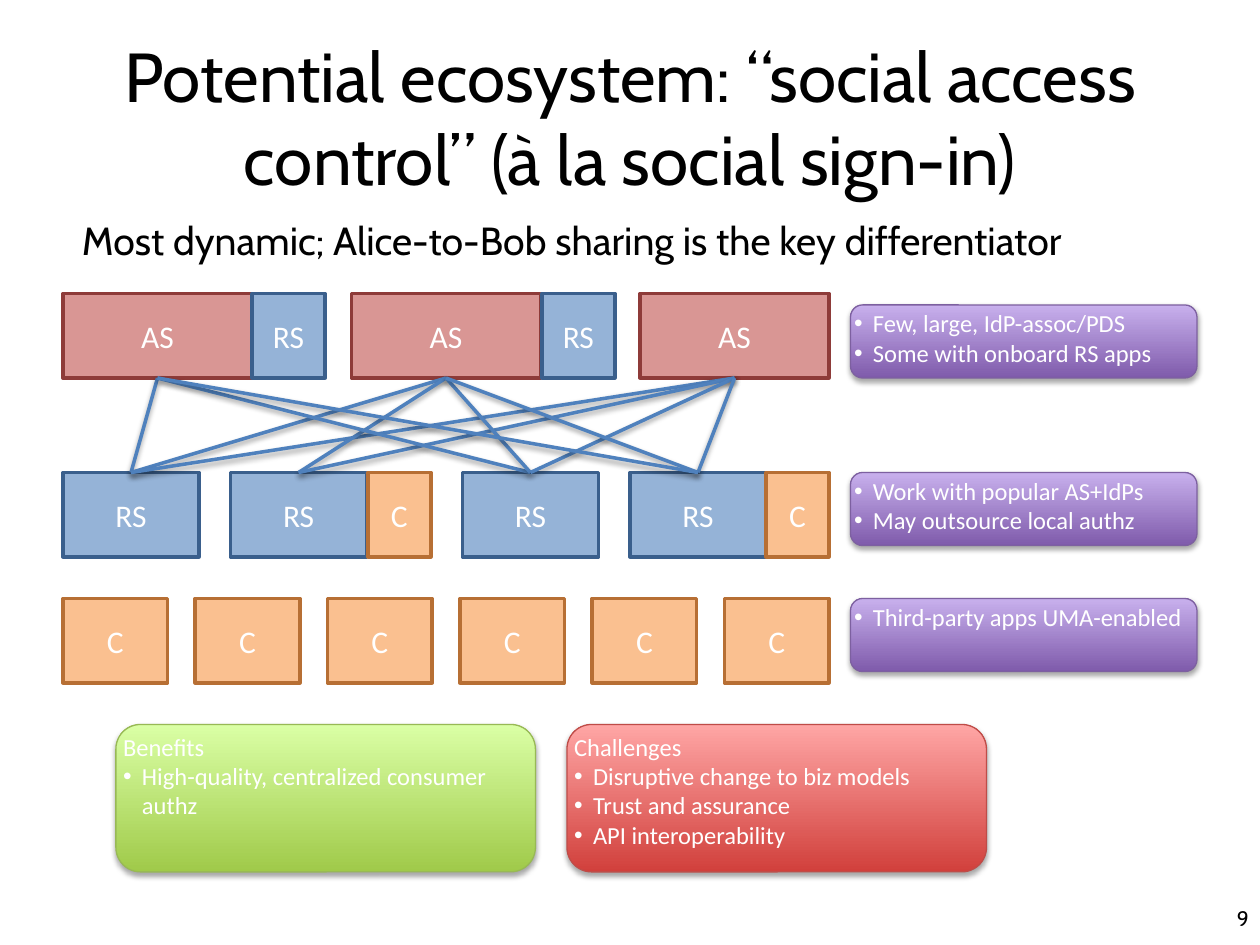
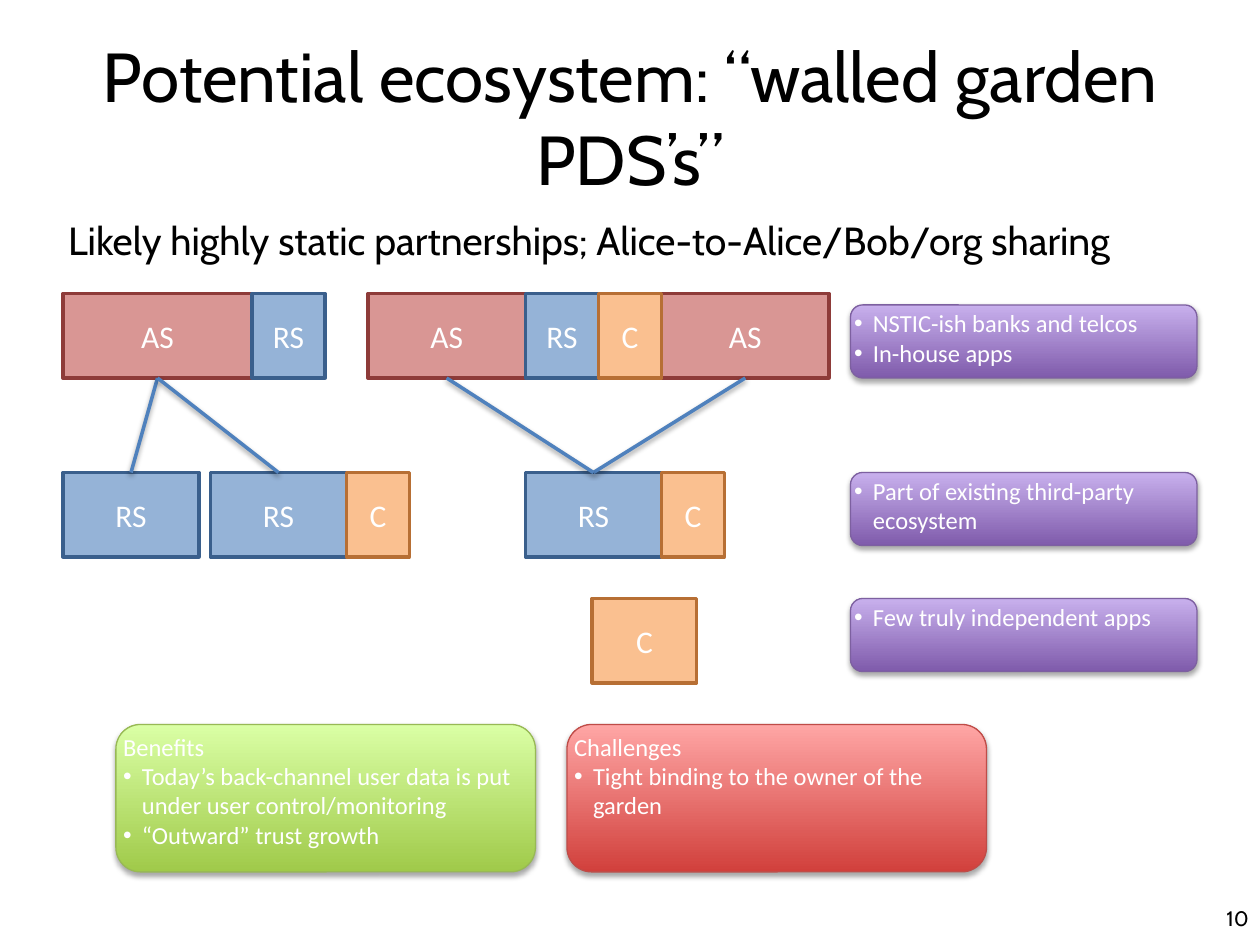
"""Build two slides on potential access-control ecosystems."""
from lxml.etree import SubElement
from pptx import Presentation
from pptx.dml.color import RGBColor
from pptx.enum.shapes import MSO_CONNECTOR as Conn, MSO_SHAPE as Form
from pptx.enum.text import MSO_ANCHOR as Anchor, MSO_AUTO_SIZE as Fit, PP_ALIGN as Align
from pptx.oxml.ns import qn
from pptx.util import Inches, Pt

hue = RGBColor.from_string

BLACK, WHITE, LINK = "000000", "FFFFFF", "4F81BD"
TINTS = {"AS": ("D99694", "8E3B39"), "RS": ("95B3D7", "3A5F8C"), "C": ("FAC090", "B76F34")}
PURPLE = ("7F5BAB", "C8B0ED", "7D60A0")
GREEN = ("A0CA4A", "DAFFA5", "98B955")
RED = ("D1403C", "FFA6A5", "BF4C48")
TOP, MID, LOW = 2.33, 3.75, 4.75
TALL = 0.67

SLIDES = [
    {
        "page": "9",
        "title": "Potential ecosystem: “social access control” (à la social sign-in)",
        "lead": (0.55, "Most dynamic; Alice-to-Bob sharing is the key differentiator"),
        "blocks": [
            ("AS", TOP, [(0.5 + 2.29 * i, 1.5) for i in range(3)]),
            ("RS", MID, [(left, 1.08) for left in (0.5, 1.83, 3.67, 5)]),
            ("RS", TOP, [(2, 0.58), (4.3, 0.58)]),
            ("C", MID, [(2.92, 0.5), (6.08, 0.5)]),
            ("C", LOW, [(0.5 + 1.05 * i, 0.83) for i in range(6)]),
        ],
        "links": [(0, 0), (0, 1), (0, 2), (1, 1), (1, 2), (2, 0),
                  (2, 1), (2, 2), (3, 2), (3, 1), (3, 0)],
        "notes": [
            ["Few, large, IdP-assoc/PDS", "Some with onboard RS apps"],
            ["Work with popular AS+IdPs", "May outsource local authz"],
            ["Third-party apps UMA-enabled"],
        ],
        "pros": ["High-quality, centralized consumer authz"],
        "cons": ["Disruptive change to biz models", "Trust and assurance",
                 "API interoperability"],
    },
    {
        "page": "10",
        "title": "Potential ecosystem: “walled garden PDS’s”",
        "lead": (0.44, "Likely highly static partnerships; Alice-to-Alice/Bob/org sharing"),
        "blocks": [
            ("AS", TOP, [(0.5, 1.5), (2.92, 1.25), (5.25, 1.33)]),
            ("RS", MID, [(left, 1.08) for left in (0.5, 1.67, 4.17)]),
            ("RS", TOP, [(2, 0.58), (4.17, 0.58)]),
            ("C", MID, [(2.75, 0.5), (5.25, 0.5)]),
            ("C", TOP, [(4.75, 0.5)]),
            ("C", LOW, [(4.7, 0.83)]),
        ],
        "links": [(0, 0), (1, 0), (2, 2), (2, 1)],
        "notes": [
            ["NSTIC-ish banks and telcos", "In-house apps"],
            ["Part of existing third-party ecosystem"],
            ["Few truly independent apps"],
        ],
        "pros": ["Today’s back-channel user data is put under user control/monitoring",
                 "“Outward” trust growth"],
        "cons": ["Tight binding to the owner of the garden"],
    },
]


def write(para, text, size, face, tint, align=Align.LEFT):
    """Add one formatted run to a paragraph."""
    para.alignment = align
    run = para.add_run()
    run.text = text
    run.font.size = Pt(size)
    run.font.name = face
    run.font.color.rgb = hue(tint)


def shade(shape, alpha, dist):
    """Drop a soft black shadow straight below a shape."""
    glow = SubElement(shape._element.spPr, qn("a:effectLst"))
    drop = SubElement(glow, qn("a:outerShdw"), blurRad=str(Pt(3.1)), dist=str(Pt(dist)),
                      dir="5400000", rotWithShape="0")
    tone = SubElement(drop, qn("a:srgbClr"), val=BLACK)
    SubElement(tone, qn("a:alpha"), val=str(alpha * 1000))


deck = Presentation()
deck.slide_width, deck.slide_height = Inches(10), Inches(7.5)

for data in SLIDES:
    slide = deck.slides.add_slide(deck.slide_layouts[1])
    shapes = slide.shapes
    title, lead = shapes.title, slide.placeholders[1]
    page = shapes.add_textbox(0, 0, 0, 0)
    left, words = data["lead"]
    for box, text, size, align, anchor, area in (
        (title, data["title"], 39.6, Align.CENTER, Anchor.MIDDLE, (0.5, 0.3, 9, 1.25)),
        (lead, words, 22.4, Align.LEFT, Anchor.TOP, (left, 1.67, 8.5, 0.42)),
        (page, data["page"], 12, Align.RIGHT, Anchor.TOP, (9.62, 7.14, 0.39, 0.4)),
    ):
        box.left, box.top, box.width, box.height = map(Inches, area)
        frame = box.text_frame
        frame.word_wrap = True
        frame.auto_size = Fit.NONE
        frame.vertical_anchor = anchor
        para = frame.paragraphs[0]
        para.space_before = Pt(0)
        write(para, text, size, "Cabin", BLACK, align)
    page.text_frame.margin_left = 0
    props = lead.text_frame.paragraphs[0]._p.get_or_add_pPr()
    props.set("marL", "0")
    props.set("indent", "0")
    SubElement(props, qn("a:buNone"))

    made = {}
    for kind, top, spans in data["blocks"]:
        fill, edge = TINTS[kind]
        for left, wide in spans:
            block = shapes.add_shape(Form.RECTANGLE, Inches(left), Inches(top),
                                     Inches(wide), Inches(TALL))
            block.shadow.inherit = False
            block.fill.solid()
            block.fill.fore_color.rgb = hue(fill)
            block.line.color.rgb = hue(edge)
            block.line.width = Pt(2)
            block.text_frame.vertical_anchor = Anchor.MIDDLE
            write(block.text_frame.paragraphs[0], kind, 18, "Calibri", WHITE, Align.CENTER)
            made.setdefault((kind, top), []).append(block)

    for low, high in data["links"]:
        link = shapes.add_connector(Conn.STRAIGHT, 0, 0, 0, 0)
        link.begin_connect(made["RS", MID][low], 0)
        link.end_connect(made["AS", TOP][high], 2)
        link.line.color.rgb = hue(LINK)
        link.line.width = Pt(2)
        shade(link, 38, 1.6)

    cards = [((6.75, top, 2.75, 0.58), PURPLE, "", items)
             for top, items in zip((2.42, MID, LOW), data["notes"])]
    cards.append(((0.92, 5.75, 3.33, 1.17), GREEN, "Benefits", data["pros"]))
    cards.append(((4.5, 5.75, 3.33, 1.17), RED, "Challenges", data["cons"]))
    for area, (dark, light, edge), head, items in cards:
        card = shapes.add_shape(Form.ROUNDED_RECTANGLE, *map(Inches, area))
        card.fill.gradient()
        card.fill.gradient_angle = 90
        for stop, tint in zip(card.fill.gradient_stops, (dark, light)):
            stop.color.rgb = hue(tint)
        card.line.color.rgb = hue(edge)
        card.line.width = Pt(0.75)
        shade(card, 35, 1.8)
        frame = card.text_frame
        frame.word_wrap = True
        frame.vertical_anchor = Anchor.TOP
        frame.margin_left = frame.margin_right = frame.margin_top = frame.margin_bottom = 0
        lines = [head] * bool(head) + items
        for i, text in enumerate(lines):
            para = frame.add_paragraph() if i else frame.paragraphs[0]
            if text != head:
                props = para._p.get_or_add_pPr()
                props.set("marL", str(Inches(0.15)))
                props.set("indent", str(-Inches(0.15)))
                SubElement(props, qn("a:buFont"), typeface="Arial")
                SubElement(props, qn("a:buChar"), char="•")
            write(para, text, 14, "Calibri", WHITE)

deck.save("out.pptx")
